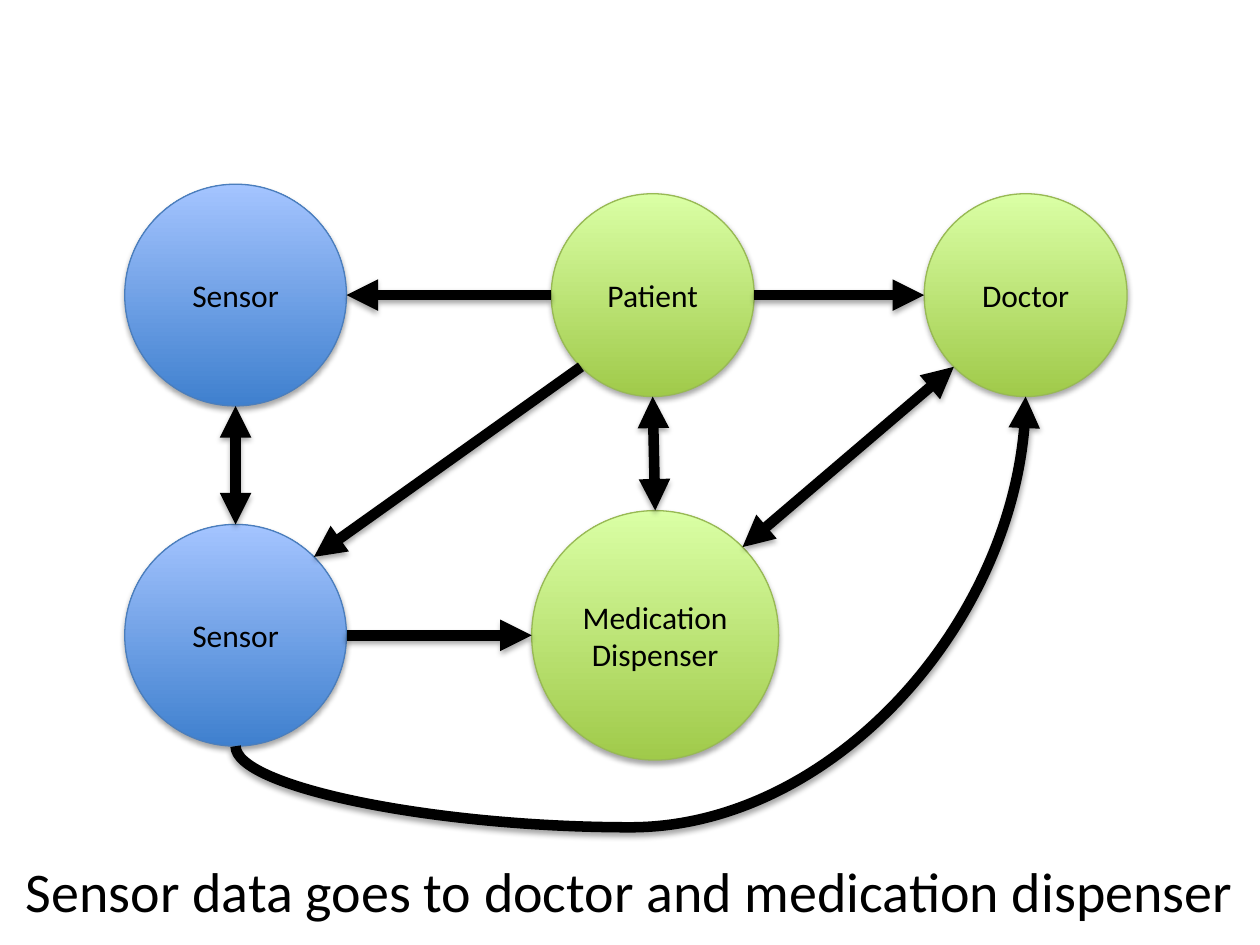
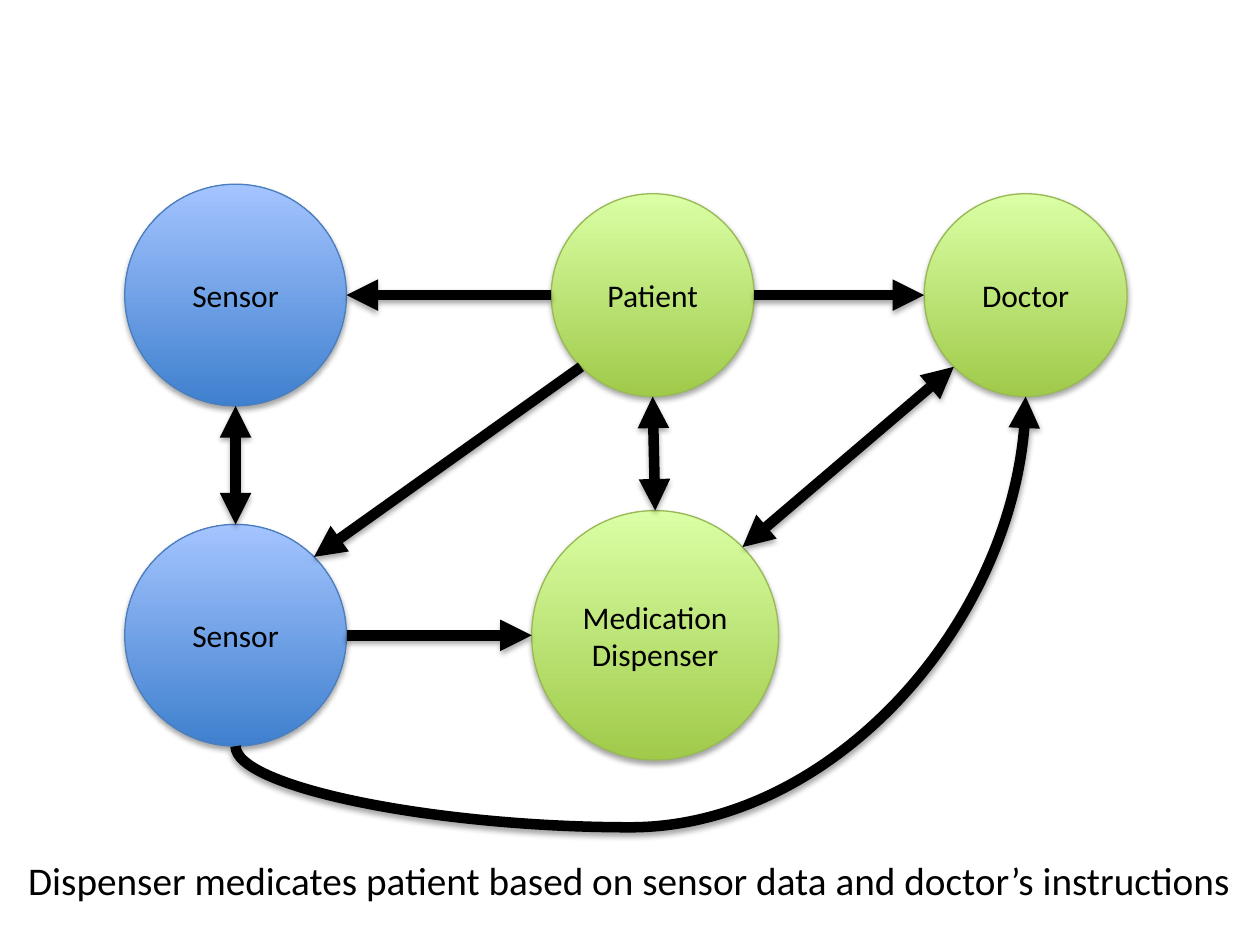
from collections import namedtuple
from math import cos, radians, sin

from lxml.etree import SubElement
from pptx import Presentation
from pptx.dml.color import RGBColor
from pptx.enum.shapes import MSO_CONNECTOR as Connector, MSO_SHAPE as Preset
from pptx.enum.text import MSO_ANCHOR as Anchor, MSO_AUTO_SIZE as AutoSize, PP_ALIGN as Align
from pptx.oxml.ns import qn
from pptx.util import Inches, Pt

BLACK = RGBColor(0x00, 0x00, 0x00)
BLUE_DARK, BLUE_LIGHT, BLUE_EDGE = (
    RGBColor(0x3F, 0x80, 0xCE), RGBColor(0xA4, 0xC4, 0xFF), RGBColor(0x4B, 0x7E, 0xBC))
GREEN_DARK, GREEN_LIGHT, GREEN_EDGE = (
    RGBColor(0xA0, 0xCA, 0x4A), RGBColor(0xDA, 0xFF, 0xA5), RGBColor(0x98, 0xB9, 0x55))
BLUE = (BLUE_DARK, BLUE_LIGHT, BLUE_EDGE)
GREEN = (GREEN_DARK, GREEN_LIGHT, GREEN_EDGE)
FONT = "Calibri"

SLIDE_WIDTH, SLIDE_HEIGHT = Inches(10), Inches(7.5)
Box = namedtuple("Box", "left top width height")
CAPTION_SHARE = 0.1
DIAGRAM_BOX = Box(0, 0, SLIDE_WIDTH, int(SLIDE_HEIGHT * (1 - CAPTION_SHARE)))
CAPTION_BOX = Box(0, DIAGRAM_BOX.height, SLIDE_WIDTH, int(SLIDE_HEIGHT * CAPTION_SHARE))

# Centres are shares of the box's width and height, diameters of its width.
UPPER_ROW, LOWER_ROW = 0.347, 0.747
Node = namedtuple("Node", "label column row width height colours")
NODES = {
    "lower sensor": Node("Sensor", 0.187, LOWER_ROW, 0.176, 0.176, BLUE),
    "dispenser": Node("Medication Dispenser", 0.52, LOWER_ROW, 0.196, 0.198, GREEN),
    "patient": Node("Patient", 0.518, UPPER_ROW, 0.161, 0.161, GREEN),
    "upper sensor": Node("Sensor", 0.187, UPPER_ROW, 0.176, 0.176, BLUE),
    "doctor": Node("Doctor", 0.814, UPPER_ROW, 0.161, 0.161, GREEN),
}

# Connection sites of an ellipse, counter-clockwise from the top.
TOP, TOP_LEFT, LEFT, BOTTOM_LEFT, BOTTOM, BOTTOM_RIGHT, RIGHT, TOP_RIGHT = range(8)
HEAD, TAIL = ("headEnd",), ("tailEnd",)
BOTH = HEAD + TAIL
LINKS = [
    ("lower sensor", TOP_RIGHT, "patient", BOTTOM_LEFT, HEAD),
    ("lower sensor", RIGHT, "dispenser", LEFT, TAIL),
    ("patient", RIGHT, "doctor", LEFT, TAIL),
    ("patient", BOTTOM, "dispenser", TOP, BOTH),
    ("upper sensor", RIGHT, "patient", LEFT, HEAD),
    ("dispenser", TOP_RIGHT, "doctor", BOTTOM_LEFT, BOTH),
    ("upper sensor", BOTTOM, "lower sensor", TOP, BOTH),
]
CURVE_BULGE = -23200


def add_shadow(shape):
    properties = shape._element.spPr
    effects = SubElement(properties, qn("a:effectLst"))
    shadow = SubElement(effects, qn("a:outerShdw"), blurRad="40000", dist="23000",
                        dir="5400000", rotWithShape="0")
    colour = SubElement(shadow, qn("a:srgbClr"), val=str(BLACK))
    SubElement(colour, qn("a:alpha"), val="35000")


def add_text(paragraph, text, size):
    paragraph.alignment = Align.CENTER
    run = paragraph.add_run()
    run.text = text
    run.font.name, run.font.size = FONT, Pt(size)
    run.font.color.rgb = BLACK


def add_node(shapes, box, node):
    width, height = int(node.width * box.width), int(node.height * box.width)
    left = int(box.left + node.column * box.width - width / 2)
    top = int(box.top + node.row * box.height - height / 2)
    circle = shapes.add_shape(Preset.OVAL, left, top, width, height)
    dark, light, edge = node.colours
    circle.fill.gradient()
    circle.fill.gradient_angle = 90
    for stop, position, colour in zip(circle.fill.gradient_stops, (0, 1), (dark, light)):
        stop.position, stop.color.rgb = position, colour
    circle.line.color.rgb, circle.line.width = edge, Pt(0.75)
    add_shadow(circle)
    circle.text_frame.word_wrap = True
    circle.text_frame.vertical_anchor = Anchor.MIDDLE
    add_text(circle.text_frame.paragraphs[0], node.label, 18)
    return circle


def site_point(circle, site):
    angle = radians(45 * site)
    return (int(circle.left + circle.width / 2 * (1 - sin(angle))),
            int(circle.top + circle.height / 2 * (1 - cos(angle))))


def style_arrow(connector, ends):
    connector.line.color.rgb, connector.line.width = BLACK, Pt(6)
    for end in ends:
        SubElement(connector.line._get_or_add_ln(), qn(f"a:{end}"), type="triangle")
    add_shadow(connector)


def add_link(shapes, start, start_site, finish, finish_site, ends):
    """Draw a straight arrow glued to a connection site of each circle."""
    connector = shapes.add_connector(
        Connector.STRAIGHT, *site_point(start, start_site), *site_point(finish, finish_site))
    glue = connector._element.nvCxnSpPr.cNvCxnSpPr
    for tag, circle, site in (("stCxn", start, start_site), ("endCxn", finish, finish_site)):
        SubElement(glue, qn(f"a:{tag}"), id=str(circle.shape_id), idx=str(site))
    style_arrow(connector, ends)


def add_curve(shapes, start, finish):
    """Sweep below the circles, from the bottom of one to the bottom of the other."""
    start_x, start_y = site_point(start, BOTTOM)
    end_x, end_y = site_point(finish, BOTTOM)
    middle_x, middle_y = (start_x + end_x) // 2, (start_y + end_y) // 2
    half_width, half_height = (start_y - end_y) // 2, (end_x - start_x) // 2
    # The frame is laid out unrotated, then turned a quarter about its middle.
    connector = shapes.add_connector(
        Connector.CURVE, middle_x + half_width, middle_y + half_height,
        middle_x - half_width, middle_y - half_height)
    properties = connector._element.spPr
    properties.find(qn("a:xfrm")).set("rot", "5400000")
    adjustments = properties.find(qn("a:prstGeom")).get_or_add_avLst()
    SubElement(adjustments, qn("a:gd"), name="adj1", fmla=f"val {CURVE_BULGE}")
    style_arrow(connector, TAIL)


def add_diagram(shapes, box):
    circles = {name: add_node(shapes, box, node) for name, node in NODES.items()}
    for start, start_site, finish, finish_site, ends in LINKS:
        add_link(shapes, circles[start], start_site, circles[finish], finish_site, ends)
    add_curve(shapes, circles["lower sensor"], circles["doctor"])


def add_caption(placeholder, box, text, size):
    placeholder.left, placeholder.top, placeholder.width, placeholder.height = box
    frame = placeholder.text_frame
    frame.auto_size = AutoSize.NONE
    paragraph = frame.paragraphs[0]
    add_text(paragraph, text, size)
    properties = paragraph._p.get_or_add_pPr()
    properties.set("marL", "0")
    properties.set("indent", "0")
    SubElement(properties, qn("a:buNone"))


def add_scenario_slide(presentation, caption, size, grouped):
    slide = presentation.slides.add_slide(presentation.slide_layouts[1])
    title = slide.shapes.title._element
    title.getparent().remove(title)
    add_caption(slide.placeholders[1], CAPTION_BOX, caption, size)
    shapes = slide.shapes.add_group_shape().shapes if grouped else slide.shapes
    add_diagram(shapes, DIAGRAM_BOX)


def main():
    presentation = Presentation()
    presentation.slide_width, presentation.slide_height = SLIDE_WIDTH, SLIDE_HEIGHT
    add_scenario_slide(
        presentation, "Sensor data goes to doctor and medication dispenser", 32, grouped=False)
    add_scenario_slide(
        presentation,
        "Dispenser medicates patient based on sensor data and doctor’s instructions",
        22.4, grouped=True)
    presentation.save("out.pptx")


if __name__ == "__main__":
    main()
